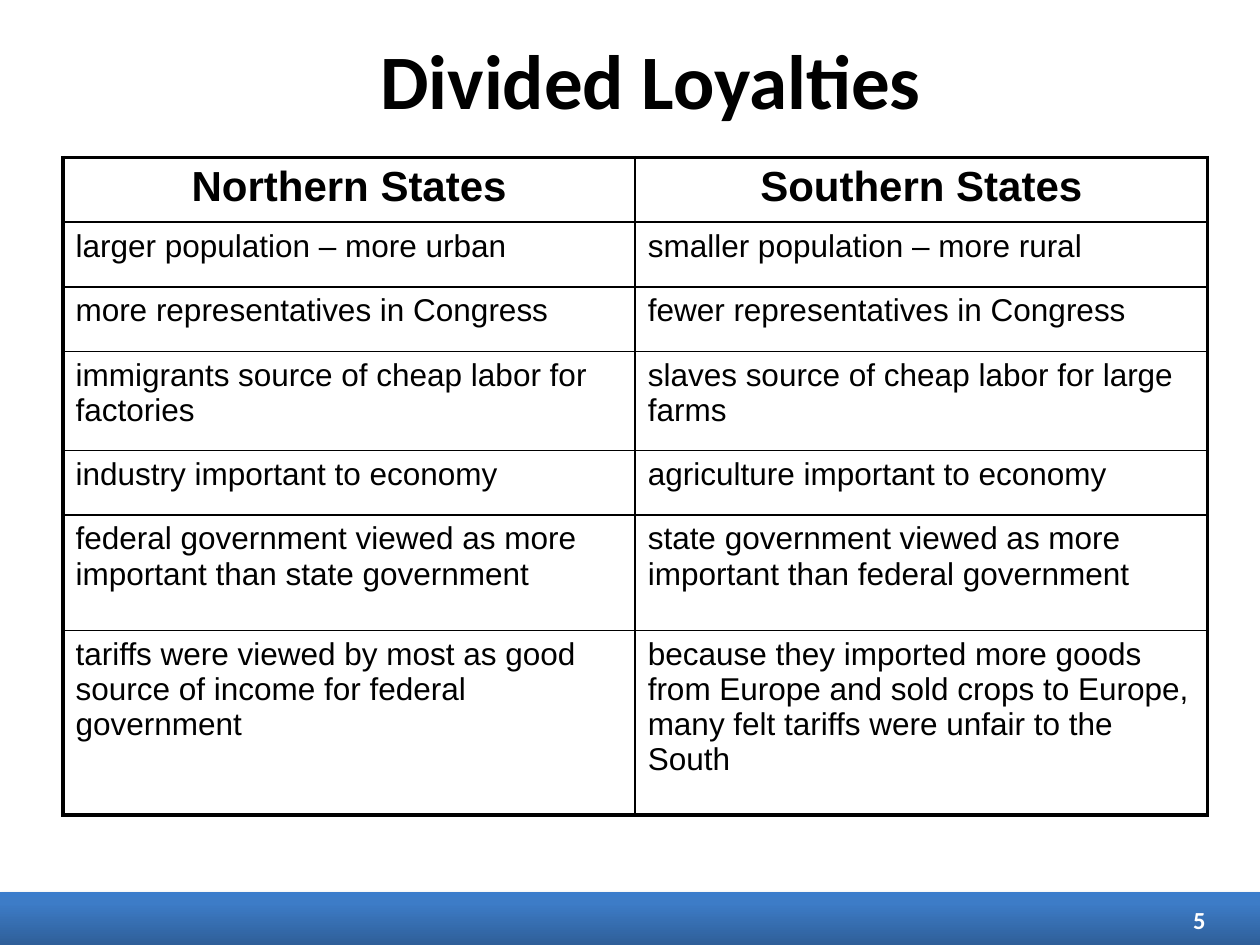
from copy import deepcopy
from dataclasses import dataclass

from lxml import etree
from pptx import Presentation
from pptx.dml.color import RGBColor
from pptx.enum.shapes import MSO_SHAPE
from pptx.enum.text import MSO_ANCHOR, PP_ALIGN
from pptx.oxml.ns import qn
from pptx.util import Pt

RECTANGLE = MSO_SHAPE.RECTANGLE
MIDDLE, TOP = MSO_ANCHOR.MIDDLE, MSO_ANCHOR.TOP
LEFT, CENTER, RIGHT = PP_ALIGN.LEFT, PP_ALIGN.CENTER, PP_ALIGN.RIGHT


@dataclass(frozen=True)
class Theme:
    ink: str = "000000"
    paper: str = "FFFFFF"
    bar_stops: tuple = ((0, "2F5F99"), (0.8, "3D7CC7"), (1, "3A7CCB"))
    heading_font: str = "Calibri"
    body_font: str = "Arial"
    title_size: float = 44
    header_size: float = 24
    body_size: float = 18
    number_size: float = 14
    outer_line: float = 2.25
    inner_line: float = 1
    cell_opacity: int = 83


THEME = Theme()

ROW_HEIGHTS = (37, 37, 37, 56.4, 37, 65.8, 105.6)
ROWS = (
    ("Northern States", "Southern States"),
    ("larger population – more urban", "smaller population – more rural"),
    ("more representatives in Congress", "fewer representatives in Congress"),
    ("immigrants source of cheap labor for factories",
     "slaves source of cheap labor for large farms"),
    ("industry important to economy", "agriculture important to economy"),
    ("federal government viewed as more important than state government",
     "state government viewed as more important than federal government"),
    ("tariffs were viewed by most as good source of income for federal government",
     "because they imported more goods from Europe and sold crops to Europe, "
     "many felt tariffs were unfair to the South"),
)


def points(box):
    return [Pt(length) for length in box]


def write_text(frame, text, *, size, font=THEME.body_font, color=THEME.ink,
               bold=False, align=LEFT):
    frame.word_wrap = True
    para = frame.paragraphs[0]
    para.alignment = align
    span = para.add_run()
    span.text = text
    span.font.name = font
    span.font.size = Pt(size)
    span.font.bold = bold
    span.font.color.rgb = RGBColor.from_string(color)


def add_label(page, box, text, **text_format):
    frame = page.shapes.add_textbox(*points(box)).text_frame
    frame.vertical_anchor = MIDDLE
    write_text(frame, text, **text_format)


def add_shadow(shape, color, opacity, blur, distance):
    shape.shadow.inherit = False
    effects = shape._element.spPr.find(qn("a:effectLst"))
    shadow = etree.SubElement(effects, qn("a:outerShdw"), blurRad=str(Pt(blur)),
                              dist=str(Pt(distance)), dir="5400000", rotWithShape="0")
    tint = etree.SubElement(shadow, qn("a:srgbClr"), val=color)
    etree.SubElement(tint, qn("a:alpha"), val=str(opacity * 1000))


def add_footer(page, box, number):
    left, top, width, height = box
    bar = page.shapes.add_shape(RECTANGLE, *points(box))
    bar.line.fill.background()
    bar.fill.gradient()
    bar.fill.gradient_angle = 90
    # The default gradient has two stops; this one needs a third
    stop_list = bar._element.spPr.find(".//" + qn("a:gsLst"))
    stop_list.append(deepcopy(stop_list[-1]))
    for stop, (position, color) in zip(bar.fill.gradient_stops, THEME.bar_stops):
        stop.position = position
        stop.color.rgb = RGBColor.from_string(color)
    add_shadow(bar, THEME.ink, opacity=35, blur=3.1, distance=1.8)
    # Slide number at the right end
    add_label(page, (left + width - 192, top + 1.5, 168, 28.8), number,
              size=THEME.number_size, font=THEME.heading_font,
              color=THEME.paper, bold=True, align=RIGHT)


def style_cell(cell, outer_edges):
    cell.fill.solid()
    cell.fill.fore_color.rgb = RGBColor.from_string(THEME.paper)
    properties = cell._tc.tcPr
    tint = properties.find(".//" + qn("a:srgbClr"))
    etree.SubElement(tint, qn("a:alpha"), val=str(THEME.cell_opacity * 1000))
    # Borders come before the fill, in the order left, right, top, bottom
    for index, edge in enumerate("LRTB"):
        width = THEME.outer_line if edge in outer_edges else THEME.inner_line
        line = etree.Element(qn(f"a:ln{edge}"), w=str(Pt(width)))
        fill = etree.SubElement(line, qn("a:solidFill"))
        etree.SubElement(fill, qn("a:srgbClr"), val=THEME.ink)
        properties.insert(index, line)


def add_comparison(page, box):
    last_row, last_column = len(ROWS) - 1, len(ROWS[0]) - 1
    table = page.shapes.add_table(len(ROWS), len(ROWS[0]), *points(box)).table
    table.horz_banding = False
    for column in table.columns:
        column.width = Pt(box[2] / len(ROWS[0]))
    for row_index, texts in enumerate(ROWS):
        table.rows[row_index].height = Pt(ROW_HEIGHTS[row_index])
        header = row_index == 0
        for column_index, text in enumerate(texts):
            cell = table.cell(row_index, column_index)
            cell.vertical_anchor = TOP
            write_text(cell.text_frame, text, bold=header,
                       size=THEME.header_size if header else THEME.body_size,
                       align=CENTER if header else LEFT)
            edges = {"L": column_index == 0, "R": column_index == last_column,
                     "T": header, "B": row_index == last_row}
            style_cell(cell, [edge for edge, outer in edges.items() if outer])


def main():
    deck = Presentation()
    deck.slide_width, deck.slide_height = Pt(720), Pt(540)
    page = deck.slides.add_slide(deck.slide_layouts[6])
    add_footer(page, (0, 509.8, 720, 30.2), "5")
    add_label(page, (48, 0, 648, 90), "Divided Loyalties", size=THEME.title_size,
              font=THEME.heading_font, bold=True, align=CENTER)
    add_comparison(page, (36, 90, 654, sum(ROW_HEIGHTS)))
    deck.save("out.pptx")


if __name__ == "__main__":
    main()
